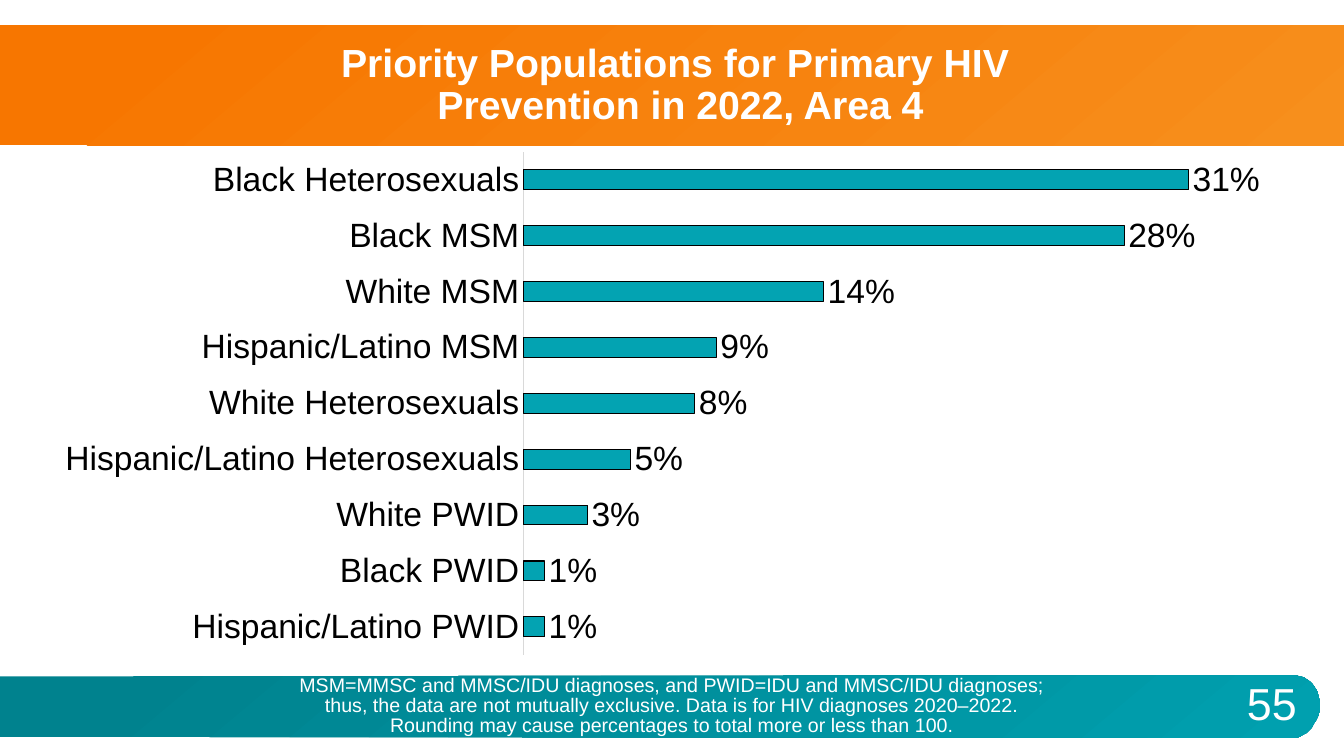
from lxml import etree
from pptx import Presentation
from pptx.chart.data import CategoryChartData
from pptx.dml.color import RGBColor
from pptx.enum.chart import XL_CHART_TYPE as ChartType
from pptx.enum.chart import XL_LABEL_POSITION as LabelPosition
from pptx.enum.chart import XL_TICK_LABEL_POSITION as TickLabels
from pptx.enum.chart import XL_TICK_MARK as TickMark
from pptx.enum.shapes import MSO_SHAPE as Shape
from pptx.enum.text import MSO_ANCHOR as Anchor
from pptx.enum.text import PP_ALIGN as Align
from pptx.oxml.ns import qn
from pptx.util import Pt

PX = 9144  # EMU per px, 100 px to the inch
FONT = "Arial"
WHITE, BLACK = "FFFFFF", "000000"
POPULATIONS = {
    "Black Heterosexuals": 31,
    "Black MSM": 28,
    "White MSM": 14,
    "Hispanic/Latino MSM": 9,
    "White Heterosexuals": 8,
    "Hispanic/Latino Heterosexuals": 5,
    "White PWID": 3,
    "Black PWID": 1,
    "Hispanic/Latino PWID": 1,
}


def emu(*lengths):
    return [length * PX for length in lengths]


def color(hex_text):
    return RGBColor.from_string(hex_text)


def set_font(font, size, hex_text, bold=False):
    font.name, font.size, font.bold = FONT, Pt(size), bold
    font.color.rgb = color(hex_text)


def add_text(page, box, paragraphs, size, bold=False, spacing=1.0, anchor=Anchor.TOP):
    frame = page.shapes.add_textbox(*emu(*box)).text_frame
    frame.word_wrap = True
    frame.vertical_anchor = anchor
    for index, text in enumerate(paragraphs):
        para = frame.add_paragraph() if index else frame.paragraphs[0]
        para.alignment = Align.CENTER
        para.line_spacing = spacing
        for number, line in enumerate(text.split("\n")):
            if number:
                para.add_line_break()
            span = para.add_run()
            span.text = line
            set_font(span.font, size, WHITE, bold)


def paint_gradient(shape, start, end):
    shape.shadow.inherit = False
    shape.line.fill.background()
    shape.fill.gradient()
    shape.fill.gradient_angle = 310
    for stop, position, hex_text in zip(shape.fill.gradient_stops, (0.09, 1), (start, end)):
        stop.position = position
        stop.color.rgb = color(hex_text)


def curve(points, steps=24):
    """Points along a cubic Bezier curve."""
    for step in range(steps + 1):
        t = step / steps
        weights = ((1 - t) ** 3, 3 * t * (1 - t) ** 2, 3 * t * t * (1 - t), t ** 3)
        yield tuple(sum(w * point[axis] for w, point in zip(weights, points)) for axis in (0, 1))


def add_header(page, box):
    left, top, width, height = box
    band = page.shapes.add_shape(Shape.RECTANGLE, *emu(*box))
    paint_gradient(band, "F77600", "F78F1C")
    add_text(page, (left + 74, top + 1, width - 142, height - 1),
             ["Priority Populations for Primary HIV\n Prevention in 2022, Area 4"],
             28, bold=True, spacing=0.9, anchor=Anchor.MIDDLE)


def add_footer(page, box):
    left, top, width, height = box
    right, bottom = left + width, top + height
    bend = right - 29
    cap = list(curve([(bend, top), (bend + 40, top - 2), (bend + 37, bottom - 1), (bend, bottom)]))
    builder = page.shapes.build_freeform(*cap[0], scale=PX)
    builder.add_line_segments(cap[1:] + [(left, bottom - 1), (left, top + 1)], close=True)
    paint_gradient(builder.convert_to_shape(), "00828E", "00A0AF")
    add_text(page, (right - 102, top - 2, 109, 59), ["55"], 32, anchor=Anchor.MIDDLE)
    add_text(page, (left + 23, top - 4, width - 22, 70), [
        "MSM=MMSC and MMSC/IDU diagnoses, and PWID=IDU and MMSC/IDU diagnoses;",
        "thus, the data are not mutually exclusive. Data is for HIV diagnoses 2020–2022.\n"
        "Rounding may cause percentages to total more or less than 100.",
    ], 14, spacing=0.85)


def fix_plot_area(chart, x, y, w, h):
    """Pin the inner plot area to fractions of the chart."""
    plot_area = chart.plots[0]._element.getparent()
    for old in plot_area.findall(qn("c:layout")):
        plot_area.remove(old)
    layout = etree.Element(qn("c:layout"))
    manual = etree.SubElement(layout, qn("c:manualLayout"))
    settings = dict(layoutTarget="inner", xMode="edge", yMode="edge", x=x, y=y, w=w, h=h)
    for name, value in settings.items():
        etree.SubElement(manual, qn("c:" + name)).set("val", str(value))
    plot_area.insert(0, layout)


def add_population_chart(page, box):
    data = CategoryChartData(number_format="0")
    data.categories = list(POPULATIONS)
    data.add_series("Series 1", list(POPULATIONS.values()))
    chart = page.shapes.add_chart(ChartType.BAR_CLUSTERED, *emu(*box), data).chart
    chart.has_legend = chart.has_title = False
    set_font(chart.font, 10, BLACK)
    fix_plot_area(chart, 0.383, 0.007, 0.591, 0.936)

    names, values = chart.category_axis, chart.value_axis
    names.reverse_order = True
    set_font(names.tick_labels.font, 24, BLACK)
    names.format.line.color.rgb = color("D9D9D9")
    names.format.line.width = Pt(0.75)
    values.minimum_scale, values.maximum_scale = 0, 35
    values.tick_label_position = TickLabels.NONE
    values.format.line.fill.background()
    for axis in (names, values):
        axis.has_major_gridlines = False
        axis.major_tick_mark = axis.minor_tick_mark = TickMark.NONE

    plot = chart.plots[0]
    plot.gap_width = 182
    plot.vary_by_categories = False
    bars = plot.series[0].format
    bars.fill.solid()
    bars.fill.fore_color.rgb = color("03A3B2")
    bars.line.color.rgb = color(BLACK)
    bars.line.width = Pt(0.75)
    plot.has_data_labels = True
    labels = plot.data_labels
    labels.show_value = True
    labels.position = LabelPosition.OUTSIDE_END
    labels.number_format, labels.number_format_is_linked = "0\\%", False
    set_font(labels.font, 24, BLACK)


def main():
    deck = Presentation()
    deck.slide_width, deck.slide_height = emu(1333, 750)
    page = deck.slides.add_slide(deck.slide_layouts[6])
    add_header(page, (0, 25, 1333, 119))
    add_population_chart(page, (36, 147, 1261, 533))
    add_footer(page, (0, 670, 1309, 62))
    deck.save("out.pptx")


if __name__ == "__main__":
    main()
